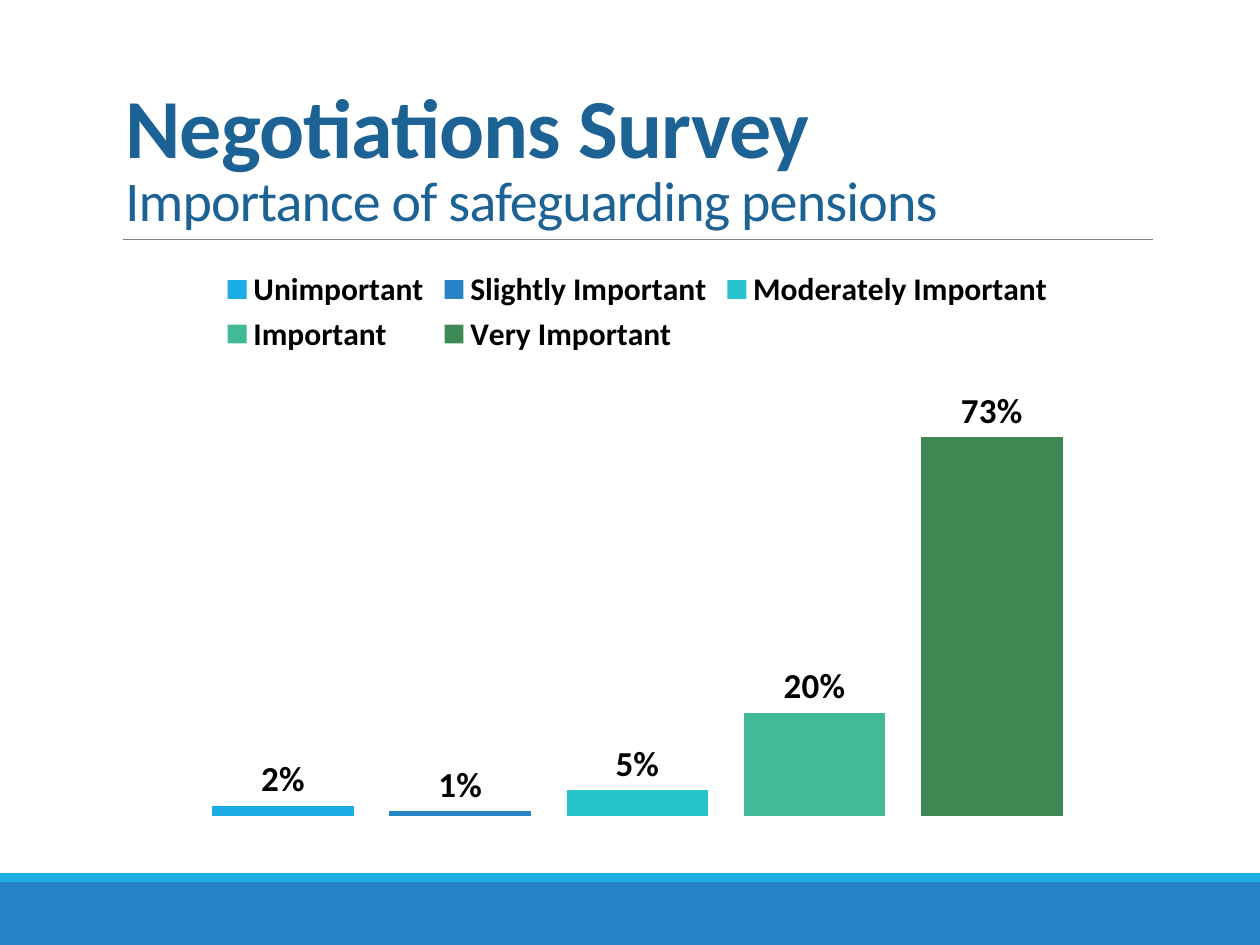
import pptx
import pptx.chart.data
import pptx.dml.color
import pptx.enum.chart
import pptx.enum.shapes
import pptx.enum.text
import pptx.oxml
import pptx.oxml.ns
import pptx.util

FONT = "Calibri"
HEADING = "Negotiations Survey"
SUBHEADING = "Importance of safeguarding pensions"
TITLE_COLOR = "1D6294"
ANSWERS = [
    ("Unimportant", 0.02, "1CADE4"),
    ("Slightly Important", 0.01, "2683C6"),
    ("Moderately Important", 0.05, "28C4CC"),
    ("Important", 0.20, "42BA97"),
    ("Very Important", 0.73, "3E8853"),
]
# Left, top, width, height in px
BANDS = [((0, 882, 1260, 63), "2683C6"), ((0, 873, 1260, 9), "1CADE4")]
RULE = (123, 239, 1153, 239)
TITLE_AREA = (113, 39, 1040, 200)
CHART_AREA = (72, 255, 1131, 585)
PLOT_LAYOUT = {"x": 0.03, "y": 0.25, "w": 0.94, "h": 0.71}


def px(*lengths):
    return [round(length * 914400 / 126) for length in lengths]


def rgb(value):
    return pptx.dml.color.RGBColor.from_string(value)


def style_font(font, size, color="000000", bold=False):
    font.name = FONT
    font.size = pptx.util.Pt(size)
    font.bold = bold
    font.color.rgb = rgb(color)


def add_text(para, text, spacing=0, **style):
    """Add one run; spacing is in hundredths of a point."""
    span = para.add_run()
    span.text = text
    style_font(span.font, **style)
    span.font._element.set("spc", str(spacing))


def add_band(page, area, color):
    band = page.shapes.add_shape(pptx.enum.shapes.MSO_SHAPE.RECTANGLE, *px(*area))
    band.shadow.inherit = False
    band.fill.solid()
    band.fill.fore_color.rgb = rgb(color)
    band.line.fill.background()


def add_rule(page):
    rule = page.shapes.add_connector(
        pptx.enum.shapes.MSO_CONNECTOR.STRAIGHT, *px(*RULE))
    rule.line.color.rgb = rgb("808080")
    rule.line.width = pptx.util.Pt(0.5)
    properties = rule._element.spPr
    properties.append(properties.makeelement(pptx.oxml.ns.qn("a:effectLst"), {}))


def add_title(page):
    frame = page.shapes.add_textbox(*px(*TITLE_AREA)).text_frame
    frame.word_wrap = True
    frame.vertical_anchor = pptx.enum.text.MSO_ANCHOR.BOTTOM
    para = frame.paragraphs[0]
    para.line_spacing = 0.85
    add_text(para, HEADING, size=48, color=TITLE_COLOR, bold=True, spacing=-50)
    para.add_line_break()
    add_text(para, SUBHEADING, size=32, color=TITLE_COLOR, spacing=-50)


def set_plot_layout(chart):
    plot_area = chart._chartSpace.chart.plotArea
    for layout in plot_area.findall(pptx.oxml.ns.qn("c:layout")):
        plot_area.remove(layout)
    modes = '<c:layoutTarget val="inner"/><c:xMode val="edge"/><c:yMode val="edge"/>'
    sizes = "".join(f'<c:{key} val="{part}"/>' for key, part in PLOT_LAYOUT.items())
    plot_area.insert(0, pptx.oxml.parse_xml(
        f'<c:layout {pptx.oxml.ns.nsdecls("c")}><c:manualLayout>'
        f"{modes}{sizes}</c:manualLayout></c:layout>"))


def add_survey_chart(page):
    data = pptx.chart.data.CategoryChartData(number_format="0%")
    data.categories = ["1"]
    for name, share, _ in ANSWERS:
        data.add_series(name, [share])
    chart = page.shapes.add_chart(
        pptx.enum.chart.XL_CHART_TYPE.COLUMN_CLUSTERED, *px(*CHART_AREA), data).chart
    style_font(chart.font, 10)
    chart.has_title = False
    chart.has_legend = True
    chart.legend.position = pptx.enum.chart.XL_LEGEND_POSITION.TOP
    chart.legend.include_in_layout = False
    style_font(chart.legend.font, 18, bold=True)

    chart.value_axis.minimum_scale = 0
    chart.value_axis.maximum_scale = 0.8
    for axis in (chart.category_axis, chart.value_axis):
        axis.has_major_gridlines = False
        axis.visible = False

    plot = chart.plots[0]
    plot.vary_by_categories = False
    plot.gap_width = 150
    plot.overlap = -25
    for series, (_, _, color) in zip(plot.series, ANSWERS):
        series.format.fill.solid()
        series.format.fill.fore_color.rgb = rgb(color)
        labels = series.data_labels
        labels.show_value = True
        labels.number_format = "0%"
        labels.number_format_is_linked = False
        labels.position = pptx.enum.chart.XL_LABEL_POSITION.OUTSIDE_END
        style_font(labels.font, 20, bold=True)
    set_plot_layout(chart)


def main():
    deck = pptx.Presentation()
    deck.slide_width, deck.slide_height = px(1260, 945)
    page = deck.slides.add_slide(deck.slide_layouts[6])
    for area, color in BANDS:
        add_band(page, area, color)
    add_rule(page)
    add_title(page)
    add_survey_chart(page)
    deck.save("out.pptx")


if __name__ == "__main__":
    main()
